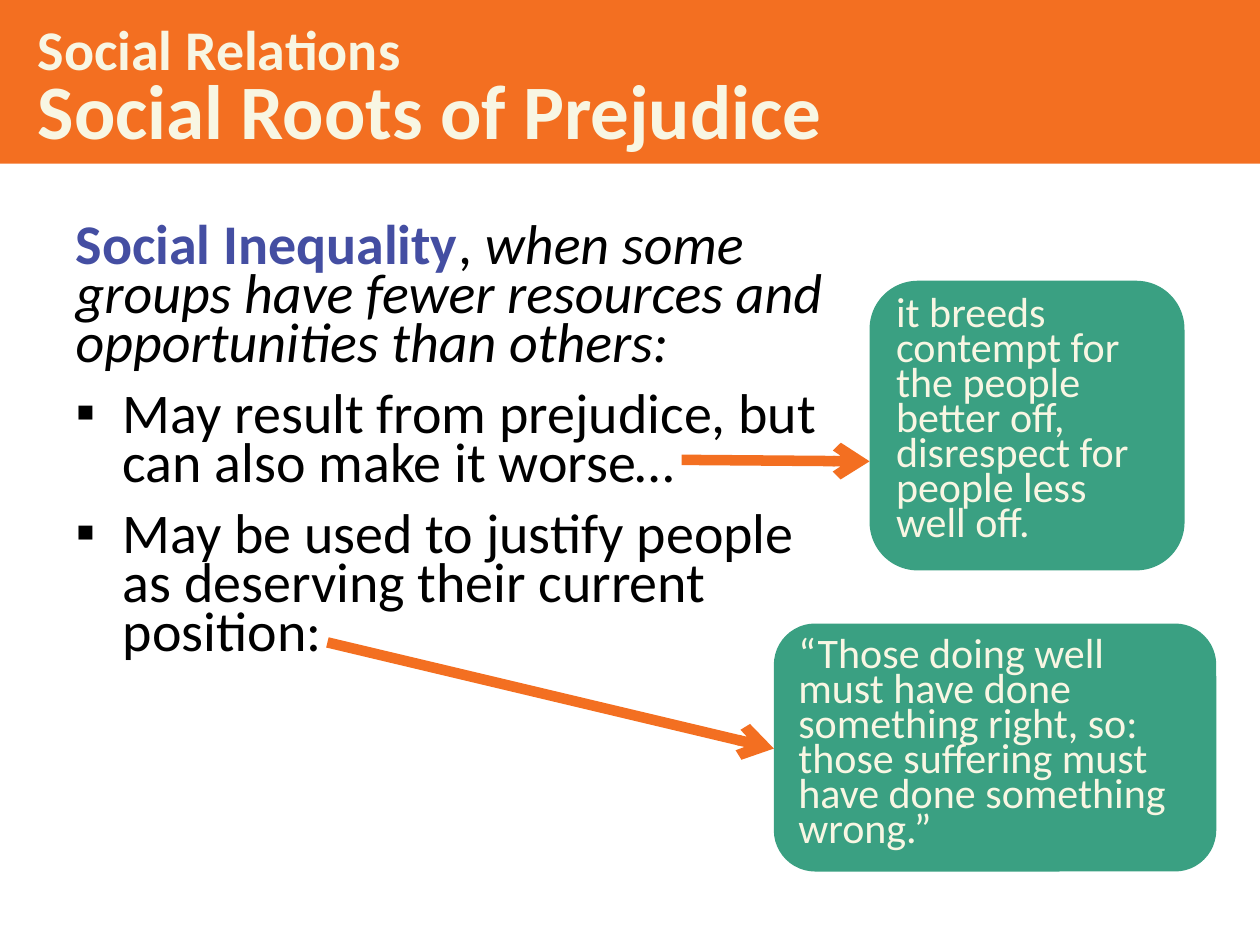
from lxml.etree import SubElement
from pptx import Presentation
from pptx.dml.color import RGBColor
from pptx.enum.shapes import MSO_CONNECTOR, MSO_SHAPE
from pptx.enum.text import MSO_ANCHOR, MSO_AUTO_SIZE, PP_ALIGN
from pptx.oxml.ns import qn
from pptx.util import Cm, Pt

ORANGE, GREEN, CREAM = "F36F21", "3AA082", "F8F6E3"
INDIGO, BLACK = "444EA2", "000000"


def color(value):
    return RGBColor.from_string(value)


def apply(obj, formats):
    for name, value in formats.items():
        setattr(obj, name, value)


class Deck:
    """Holds the presentation, its text style and the current slide."""

    font = "Calibri"

    def __init__(self, width, height):
        self.prs = Presentation()
        apply(self.prs, {"slide_width": Cm(width), "slide_height": Cm(height)})
        self.s = None

    def new_slide(self):
        self.s = self.prs.slides.add_slide(self.prs.slide_layouts[1])

    def place(self, sp, left, top, width, height):
        apply(sp, {"left": Cm(left), "top": Cm(top),
                   "width": Cm(width), "height": Cm(height)})

    def fill(self, sp, value):
        sp.fill.solid()
        sp.fill.fore_color.rgb = color(value)
        sp.line.fill.background()

    def frame(self, sp, **formats):
        tf = sp.text_frame
        apply(tf, {"word_wrap": True, "auto_size": MSO_AUTO_SIZE.NONE,
                   "vertical_anchor": MSO_ANCHOR.TOP, **formats})
        return tf

    def run(self, p, text, size, fill, **formats):
        r = p.add_run()
        r.text = text
        apply(r.font, {"name": self.font, "size": Pt(size), **formats})
        r.font.color.rgb = color(fill)

    def title(self, box, lines, fill, text_color):
        sp = self.s.shapes.title
        self.place(sp, *box)
        self.fill(sp, fill)
        tf = self.frame(sp, vertical_anchor=MSO_ANCHOR.MIDDLE, margin_left=Cm(0.76))
        p = tf.paragraphs[0]
        apply(p, {"alignment": PP_ALIGN.LEFT, "line_spacing": Pt(42)})
        for i, (text, size) in enumerate(lines):
            if i:
                p.add_line_break()
            self.run(p, text, size, text_color, bold=True)

    def body(self, box, paragraphs, size=32, indent=0.95):
        sp = self.s.placeholders[1]
        self.place(sp, *box)
        tf = self.frame(sp)
        for i, (bullet, runs) in enumerate(paragraphs):
            p = tf.add_paragraph() if i else tf.paragraphs[0]
            apply(p, {"line_spacing": Pt(28), "space_after": Pt(6)})
            hang = Cm(indent) if bullet else 0
            pPr = p._p.get_or_add_pPr()
            pPr.set("marL", str(hang))
            pPr.set("indent", str(-hang))
            if bullet:
                SubElement(pPr, qn("a:buChar")).set("char", bullet)
            else:
                SubElement(pPr, qn("a:buNone"))
            for text, fill, formats in runs:
                self.run(p, text, size, fill, **formats)

    def callout(self, box, text, fill, text_color, size=24):
        sp = self.s.shapes.add_shape(MSO_SHAPE.ROUNDED_RECTANGLE, *map(Cm, box))
        sp.shadow.inherit = False
        self.fill(sp, fill)
        p = self.frame(sp).paragraphs[0]
        apply(p, {"alignment": PP_ALIGN.LEFT, "line_spacing": Pt(20),
                  "space_before": Pt(size * 0.2), "space_after": Pt(6)})
        self.run(p, text, size, text_color)

    def arrow(self, start, end, fill, width=6):
        line = self.s.shapes.add_connector(
            MSO_CONNECTOR.STRAIGHT, *map(Cm, (*start, *end)))
        line.line.color.rgb = color(fill)
        line.line.width = Pt(width)
        SubElement(line.line._get_or_add_ln(), qn("a:tailEnd")).set("type", "arrow")
        SubElement(line._element.spPr, qn("a:effectLst"))


def main():
    deck = Deck(25.4, 19.05)
    deck.new_slide()

    # Banner
    deck.title((0, 0, 25.4, 3.3),
               [("Social Relations", 32), ("Social Roots of Prejudice", 44)],
               ORANGE, CREAM)

    # Definition and bullets
    deck.body((1.27, 4.45, 16.05, 12.57), [
        (None, [
            ("Social Inequality", INDIGO, {"bold": True}),
            (", ", BLACK, {}),
            ("when some groups have fewer resources and opportunities than others:",
             BLACK, {"italic": True}),
        ]),
        ("▪", [("May result from prejudice, but can also make it worse…", BLACK, {})]),
        ("▪", [("May be used to justify people as deserving their current position:",
                BLACK, {})]),
    ])

    # Callouts, each with the arrow that leads to its left edge
    callouts = [
        ((17.53, 5.66, 6.35, 5.84), (13.74, 9.27), 9.3,
         "it breeds contempt for the people better off, "
         "disrespect for people less well off."),
        ((15.6, 12.57, 8.92, 5), (6.6, 12.95), 15.09,
         "“Those doing well must have done something right, so: "
         "those suffering must have done something wrong.”"),
    ]
    for box, start, tip, text in callouts:
        deck.callout(box, text, GREEN, CREAM)
        deck.arrow(start, (box[0], tip), ORANGE)

    deck.prs.save("out.pptx")


if __name__ == "__main__":
    main()
